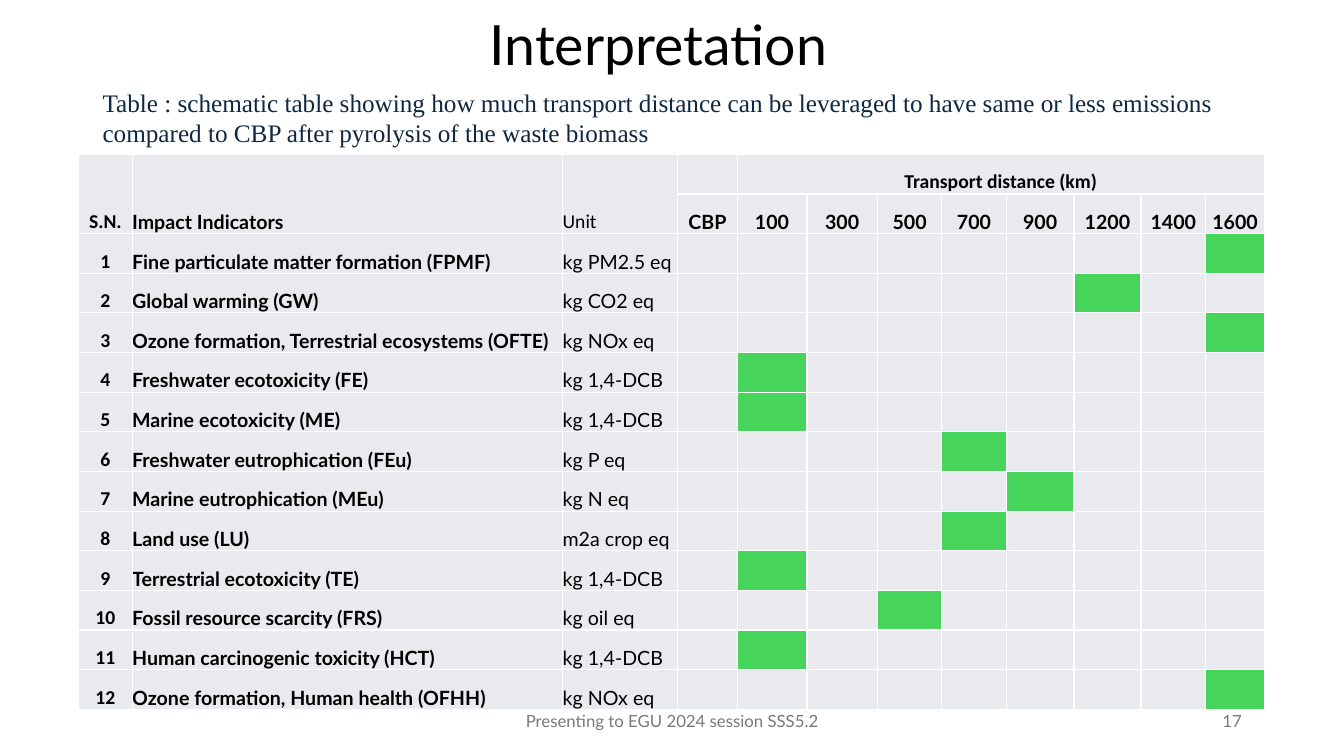
from dataclasses import dataclass

from lxml.etree import SubElement
from pptx import Presentation
from pptx.dml.color import RGBColor
from pptx.enum.text import MSO_ANCHOR as Anchor, PP_ALIGN as Align
from pptx.oxml.ns import qn
from pptx.util import Pt


@dataclass(frozen=True)
class Theme:
    black: str = "000000"
    navy: str = "0E2841"
    muted: str = "797979"
    cell: str = "E8EAED"
    reached: str = "47D45A"
    border: str = "FFFFFF"
    title_size: float = 39.6
    caption_size: float = 18
    table_size: float = 14
    footer_size: float = 12
    main_font: str = "Lato"
    label_font: str = "Calibri"
    caption_font: str = "Times New Roman"


THEME = Theme()
DISTANCES = [100, 300, 500, 700, 900, 1200, 1400, 1600]
FIRST_DISTANCE_COLUMN = 4
COLUMN_WIDTHS = [38.2, 307.5, 82.2, 42.6, 49.8, 50.4, 46, 46, 48.4, 47.9, 46.3, 41.9]
ROW_HEIGHT = 28.34
INDICATORS = [
    ("Fine particulate matter formation (FPMF)", "kg PM2.5 eq", 1600),
    ("Global warming (GW)", "kg CO2 eq", 1200),
    ("Ozone formation, Terrestrial ecosystems (OFTE)", "kg NOx eq", 1600),
    ("Freshwater ecotoxicity (FE)", "kg 1,4-DCB", 100),
    ("Marine ecotoxicity (ME)", "kg 1,4-DCB", 100),
    ("Freshwater eutrophication (FEu)", "kg P eq", 700),
    ("Marine eutrophication (MEu)", "kg N eq", 900),
    ("Land use (LU)", "m2a crop eq", 700),
    ("Terrestrial ecotoxicity (TE)", "kg 1,4-DCB", 100),
    ("Fossil resource scarcity (FRS)", "kg oil eq", 500),
    ("Human carcinogenic toxicity (HCT)", "kg 1,4-DCB", 100),
    ("Ozone formation, Human health (OFHH)", "kg NOx eq", 1600),
]


def style_paragraph(paragraph, size, color, font, align, bold=False):
    paragraph.alignment = align
    for run in paragraph.runs:
        run.font.size = Pt(size)
        run.font.name = font
        run.font.bold = bold
        run.font.color.rgb = RGBColor.from_string(color)


def add_text(slide, text, box, size, color, font=THEME.main_font,
             align=Align.LEFT, anchor=Anchor.MIDDLE, line_spacing=None):
    shape = slide.shapes.add_textbox(*map(Pt, box))
    text_frame = shape.text_frame
    text_frame.word_wrap = True
    text_frame.vertical_anchor = anchor
    text_frame.text = text
    paragraph = text_frame.paragraphs[0]
    paragraph.line_spacing = line_spacing
    style_paragraph(paragraph, size, color, font, align)


def add_borders(cell):
    properties = cell._tc.get_or_add_tcPr()
    for position, side in enumerate(("a:lnL", "a:lnR", "a:lnT", "a:lnB")):
        line = SubElement(properties, qn(side), w=str(Pt(1)))
        fill = SubElement(line, qn("a:solidFill"))
        SubElement(fill, qn("a:srgbClr"), val=THEME.border)
        properties.insert(position, line)


def format_cell(cell):
    cell.margin_left = cell.margin_right = 0
    cell.margin_top = cell.margin_bottom = 0
    cell.vertical_anchor = Anchor.BOTTOM
    fill_cell(cell, THEME.cell)
    add_borders(cell)
    cell.text_frame.paragraphs[0].font.size = Pt(THEME.table_size)


def fill_cell(cell, color):
    cell.fill.solid()
    cell.fill.fore_color.rgb = RGBColor.from_string(color)


def write_cell(cell, text, font=THEME.main_font, align=Align.LEFT, bold=True):
    cell.text_frame.text = text
    style_paragraph(cell.text_frame.paragraphs[0], THEME.table_size,
                    THEME.black, font, align, bold)


def write_header(table):
    for column in range(3):
        table.cell(0, column).merge(table.cell(1, column))
    distance_title = table.cell(0, FIRST_DISTANCE_COLUMN)
    distance_title.merge(table.cell(0, len(COLUMN_WIDTHS) - 1))
    write_cell(table.cell(0, 0), "S.N.", THEME.label_font, Align.CENTER)
    write_cell(table.cell(0, 1), "Impact Indicators")
    write_cell(table.cell(0, 2), "Unit", THEME.label_font, bold=False)
    write_cell(distance_title, "Transport distance (km)", THEME.label_font, Align.CENTER)
    for column, label in enumerate(["CBP", *DISTANCES], FIRST_DISTANCE_COLUMN - 1):
        write_cell(table.cell(1, column), str(label), align=Align.CENTER)


def write_indicators(table):
    for number, (name, unit, distance) in enumerate(INDICATORS, 1):
        row = number + 1
        write_cell(table.cell(row, 0), str(number), THEME.label_font, Align.CENTER)
        write_cell(table.cell(row, 1), name)
        write_cell(table.cell(row, 2), unit, bold=False)
        column = FIRST_DISTANCE_COLUMN + DISTANCES.index(distance)
        fill_cell(table.cell(row, column), THEME.reached)


def add_distance_table(slide, left, top):
    row_count = len(INDICATORS) + 2
    frame = slide.shapes.add_table(
        row_count, len(COLUMN_WIDTHS), Pt(left), Pt(top),
        Pt(sum(COLUMN_WIDTHS)), Pt(row_count * ROW_HEIGHT))
    table = frame.table
    table.first_row = table.horz_banding = False
    for column, width in zip(table.columns, COLUMN_WIDTHS):
        column.width = Pt(width)
    for row in table.rows:
        row.height = Pt(ROW_HEIGHT)
    for cell in table.iter_cells():
        format_cell(cell)
    write_header(table)
    write_indicators(table)


def main():
    presentation = Presentation()
    presentation.slide_width = Pt(960)
    presentation.slide_height = Pt(540)
    slide = presentation.slides.add_slide(presentation.slide_layouts[6])

    add_text(slide, "Interpretation", (56.2, 10.8, 828, 46), THEME.title_size,
             THEME.black, align=Align.CENTER, line_spacing=0.9)
    add_distance_table(slide, 56.2, 110.2)
    add_text(slide, "Table : schematic table showing how much transport distance can be "
             "leveraged to have same or less emissions compared to CBP after pyrolysis "
             "of the waste biomass", (66.2, 59, 828, 51), THEME.caption_size,
             THEME.navy, THEME.caption_font, anchor=Anchor.TOP)
    add_text(slide, "Presenting to EGU 2024 session SSS5.2", (318.2, 500.4, 324, 28.8),
             THEME.footer_size, THEME.muted, align=Align.CENTER)
    add_text(slide, "17", (678.2, 500.4, 216, 28.8), THEME.footer_size,
             THEME.muted, align=Align.RIGHT)
    presentation.save("out.pptx")


if __name__ == "__main__":
    main()
